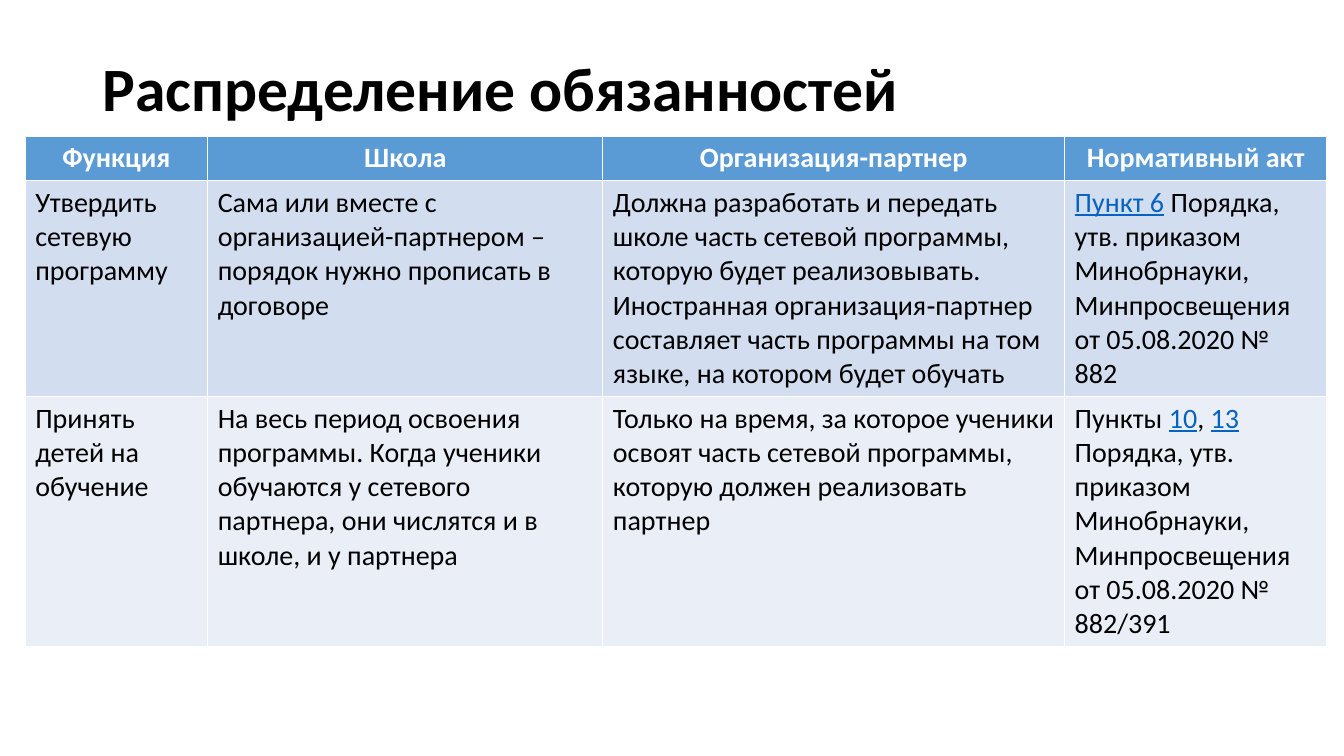
from dataclasses import dataclass

from pptx import Presentation
from pptx.dml.color import RGBColor
from pptx.enum.text import MSO_ANCHOR, PP_ALIGN
from pptx.slide import Slide
from pptx.table import _Cell
from pptx.text.text import TextFrame
from pptx.util import Inches, Pt

LEFT, CENTER = PP_ALIGN.LEFT, PP_ALIGN.CENTER
MIDDLE = MSO_ANCHOR.MIDDLE
TITLE_ONLY_LAYOUT = 5
FONT = "Calibri"
BLACK, WHITE, LINK_BLUE = "000000", "FFFFFF", "0563C1"
COLUMN_WIDTHS = (1.81, 3.92, 4.58, 2.6)


@dataclass(frozen=True)
class Part:
    """A piece of text that may look like a link."""

    text: str
    link: bool = False


@dataclass(frozen=True)
class DutyRow:
    """One table row with its height, fill and cells."""

    height: float
    fill: str
    cells: tuple[tuple[Part, ...], ...]
    header: bool = False


ROWS = (
    DutyRow(0.43, "5B9BD5", (
        (Part("Функция"),),
        (Part("Школа"),),
        (Part("Организация-партнер"),),
        (Part("Нормативный акт"),),
    ), header=True),
    DutyRow(2.13, "D2DEEF", (
        (Part("Утвердить сетевую программу"),),
        (Part("Сама или вместе с организацией-партнером – порядок нужно "
              "прописать в договоре"),),
        (Part("Должна разработать и передать школе часть сетевой программы, "
              "которую будет реализовывать. Иностранная организация‑партнер "
              "составляет часть программы на том языке, "
              "на котором будет обучать"),),
        (Part("Пункт 6", link=True),
         Part(" Порядка, утв. приказом Минобрнауки, Минпросвещения "
              "от 05.08.2020 № 882")),
    )),
    DutyRow(2.47, "EAEFF7", (
        (Part("Принять детей на обучение"),),
        (Part("На весь период освоения программы. Когда ученики обучаются "
              "у сетевого партнера, они числятся и в школе, и у партнера"),),
        (Part("Только на время, за которое ученики освоят часть сетевой "
              "программы, которую должен реализовать партнер"),),
        (Part("Пункты "), Part("10", link=True), Part(", "),
         Part("13", link=True),
         Part(" Порядка, утв. приказом Минобрнауки, Минпросвещения "
              "от 05.08.2020 № 882/391")),
    )),
)


def color(value: str) -> RGBColor:
    """Turn a hex string into a colour."""
    return RGBColor.from_string(value)


def write_text(frame: TextFrame, parts: tuple[Part, ...], *, size: float = 20,
               bold: bool = False, text_color: str = BLACK,
               align: PP_ALIGN = LEFT, line_spacing: float = 1.0) -> None:
    """Write formatted parts into the first paragraph of a frame."""
    frame.word_wrap = True
    paragraph = frame.paragraphs[0]
    paragraph.alignment = align
    paragraph.line_spacing = line_spacing
    for part in parts:
        run = paragraph.add_run()
        run.text = part.text
        run.font.name = FONT
        run.font.size = Pt(size)
        run.font.bold = bold
        run.font.underline = part.link
        run.font.color.rgb = color(LINK_BLUE if part.link else text_color)


def fill_cell(cell: _Cell, parts: tuple[Part, ...], row: DutyRow) -> None:
    """Fill and write one table cell."""
    cell.fill.solid()
    cell.fill.fore_color.rgb = color(row.fill)
    write_text(cell.text_frame, parts, bold=row.header,
               text_color=WHITE if row.header else BLACK,
               align=CENTER if row.header else LEFT)


def add_title(slide: Slide, text: str) -> None:
    """Place and write the slide title."""
    title = slide.shapes.title
    title.left, title.top = Inches(0.92), Inches(0.4)
    title.width, title.height = Inches(11.5), Inches(1.01)
    title.text_frame.vertical_anchor = MIDDLE
    write_text(title.text_frame, (Part(text),), size=44, bold=True,
               line_spacing=0.9)


def add_duties_table(slide: Slide, rows: tuple[DutyRow, ...]) -> None:
    """Draw the table of duties."""
    table = slide.shapes.add_table(
        len(rows), len(COLUMN_WIDTHS), Inches(0.25), Inches(1.35),
        Inches(sum(COLUMN_WIDTHS)), Inches(sum(row.height for row in rows)),
    ).table
    for column, width in zip(table.columns, COLUMN_WIDTHS):
        column.width = Inches(width)
    for table_row, row in zip(table.rows, rows):
        table_row.height = Inches(row.height)
        for cell, parts in zip(table_row.cells, row.cells):
            fill_cell(cell, parts, row)


def main() -> None:
    """Build and save the presentation."""
    presentation = Presentation()
    presentation.slide_width = Inches(13.33)
    presentation.slide_height = Inches(7.5)
    layout = presentation.slide_layouts[TITLE_ONLY_LAYOUT]
    slide = presentation.slides.add_slide(layout)
    add_title(slide, "Распределение обязанностей")
    add_duties_table(slide, ROWS)
    presentation.save("out.pptx")


if __name__ == "__main__":
    main()
